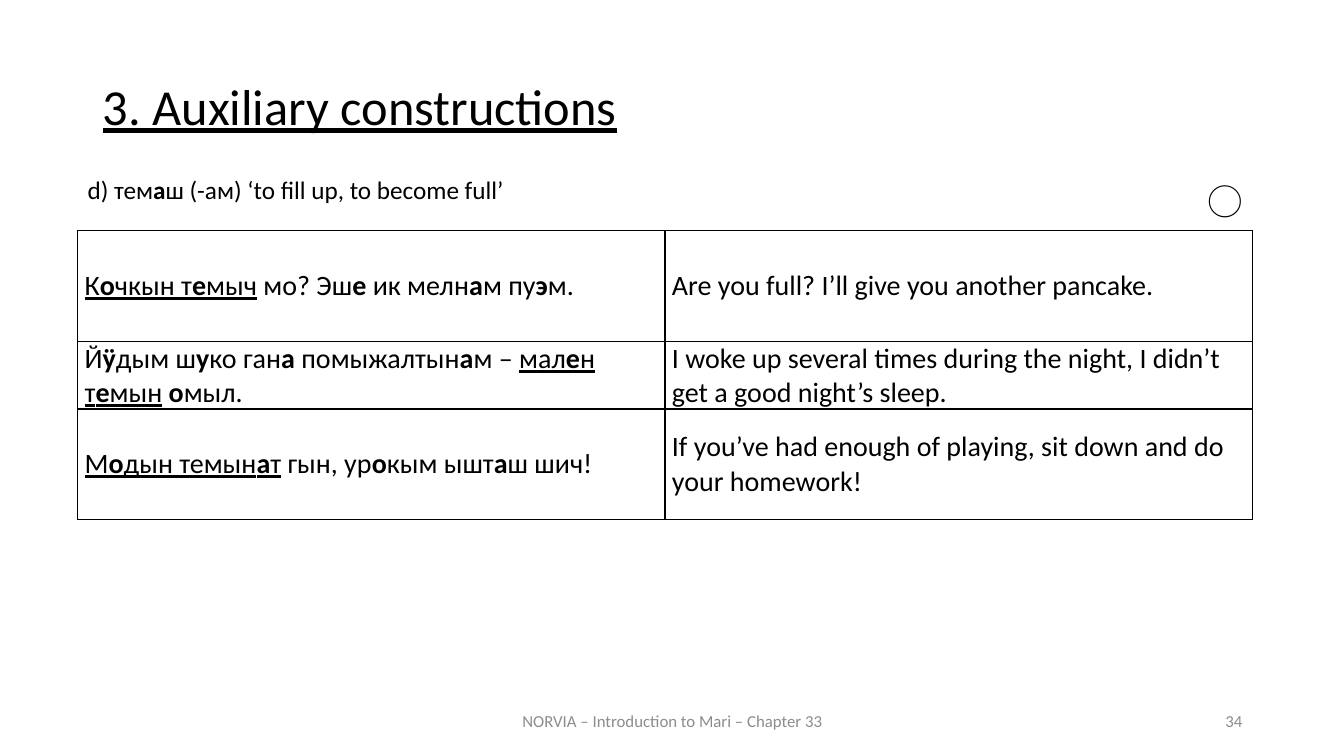
from lxml.etree import SubElement
from pptx import Presentation
from pptx.dml.color import RGBColor
from pptx.enum.text import MSO_ANCHOR as Anchor, MSO_AUTO_SIZE as AutoSize, PP_ALIGN as Align
from pptx.oxml.ns import qn
from pptx.util import Inches, Pt

BLACK = "000000"
GREY = "8C8C8C"


def colour(hex_code):
    return RGBColor.from_string(hex_code)


class LessonSlide:
    font = "Calibri"

    def __init__(self, deck):
        self.slide = deck.slides.add_slide(deck.slide_layouts[5])

    def add_runs(self, paragraph, marked, size, ink=BLACK):
        for u, stretch in enumerate(marked.split("_")):
            for b, piece in enumerate(stretch.split("*")):
                if not piece:
                    continue
                run = paragraph.add_run()
                run.text = piece
                run.font.name = self.font
                run.font.size = Pt(size)
                run.font.color.rgb = colour(ink)
                run.font.underline = u % 2 == 1
                run.font.bold = b % 2 == 1

    def title(self, marked, left, top, width, height):
        heading = self.slide.shapes.title
        heading.left, heading.top = Inches(left), Inches(top)
        heading.width, heading.height = Inches(width), Inches(height)
        frame = heading.text_frame
        frame.auto_size = AutoSize.NONE
        frame.vertical_anchor = Anchor.TOP
        paragraph = frame.paragraphs[0]
        paragraph.alignment = Align.JUSTIFY
        paragraph.line_spacing = 0.9
        self.add_runs(paragraph, marked, 36)

    def text(self, marked, left, top, width, height, size,
             align=Align.LEFT, anchor=Anchor.TOP, ink=BLACK):
        box = self.slide.shapes.add_textbox(
            Inches(left), Inches(top), Inches(width), Inches(height))
        frame = box.text_frame
        frame.word_wrap = True
        frame.vertical_anchor = anchor
        frame.paragraphs[0].alignment = align
        self.add_runs(frame.paragraphs[0], marked, size, ink)

    def border(self, cell):
        properties = cell._tc.get_or_add_tcPr()
        for place, side in enumerate(("a:lnL", "a:lnR", "a:lnT", "a:lnB")):
            line = SubElement(properties, qn(side), w=str(Pt(1)))
            fill = SubElement(line, qn("a:solidFill"))
            SubElement(fill, qn("a:srgbClr"), val=BLACK)
            properties.insert(place, line)

    def table(self, rows, left, top, width, heights):
        columns = len(rows[0])
        grid = self.slide.shapes.add_table(
            len(rows), columns, Inches(left), Inches(top),
            Inches(width), Inches(sum(heights))).table
        grid.first_row = grid.horz_banding = False
        for column in grid.columns:
            column.width = Inches(width / columns)
        for r, (sentences, height) in enumerate(zip(rows, heights)):
            grid.rows[r].height = Inches(height)
            for c, sentence in enumerate(sentences):
                cell = grid.cell(r, c)
                cell.fill.background()
                cell.vertical_anchor = Anchor.MIDDLE
                cell.margin_left = cell.margin_right = Inches(0.07)
                cell.margin_top = cell.margin_bottom = 0
                self.border(cell)
                self.add_runs(cell.text_frame.paragraphs[0], sentence, 20)


EXAMPLES = [
    ("_К*о*чкын т*е*мыч_ мо? Эш*е* ик мелн*а*м пу*э*м.",
     "Are you full? I’ll give you another pancake."),
    ("Й*ӱ*дым ш*у*ко ган*а* помыжалтын*а*м – _мал*е*н т*е*мын_ *о*мыл.",
     "I woke up several times during the night, I didn’t get a good night’s sleep."),
    ("_М*о*дын темын*а*т_ гын, ур*о*кым ышт*а*ш шич!",
     "If you’ve had enough of playing, sit down and do your homework!"),
]


def main():
    deck = Presentation()
    deck.slide_width, deck.slide_height = Inches(13.33), Inches(7.5)
    lesson = LessonSlide(deck)
    lesson.title("_3. Auxiliary constructions_", 0.92, 0.76, 11.5, 0.83)
    lesson.text("NORVIA – Introduction to Mari – Chapter 33", 4.42, 6.95, 4.5, 0.4, 12,
                Align.CENTER, Anchor.MIDDLE, GREY)
    lesson.text("34", 9.42, 6.95, 3, 0.4, 12, Align.RIGHT, Anchor.MIDDLE, GREY)
    lesson.text("d) тем*а*ш (-ам) ‘to fill up, to become full’", 0.77, 1.68, 5.32, 0.4, 18)
    lesson.table(EXAMPLES, 0.77, 2.29, 11.65, (1.1, 0.55, 1.1))
    lesson.text("🌕", 11.64, 1.68, 0.78, 0.57, 28, Align.RIGHT)
    deck.save("out.pptx")


if __name__ == "__main__":
    main()
